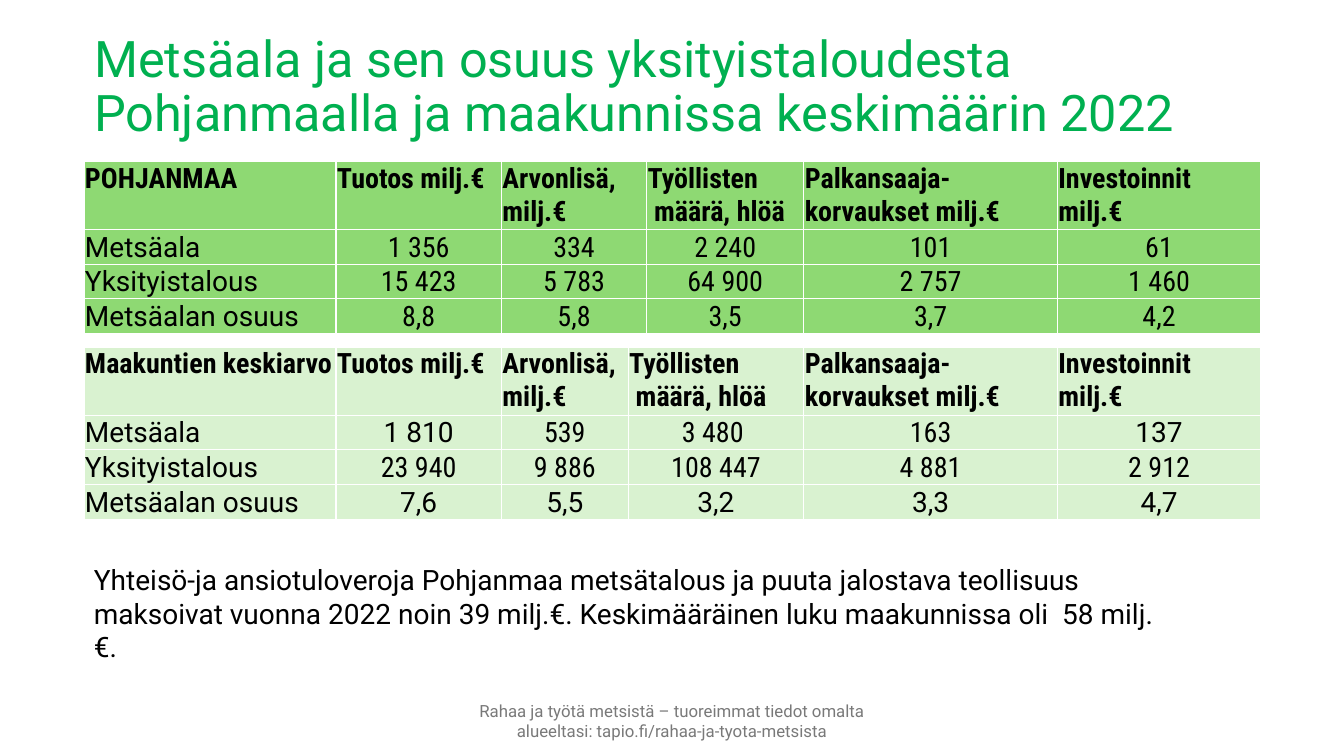
from lxml import etree
from pptx import Presentation, util as u
from pptx.dml.color import RGBColor
from pptx.enum import text
from pptx.oxml import ns

GREEN = RGBColor(0x00, 0xB0, 0x50)
MID_GREEN = RGBColor(0x8E, 0xD9, 0x73)
PALE_GREEN = RGBColor(0xD9, 0xF2, 0xD0)
BLACK = RGBColor(0x00, 0x00, 0x00)
GREY = RGBColor(0x79, 0x79, 0x79)
WHITE = RGBColor(0xFF, 0xFF, 0xFF)

WIDE, NARROW = "Roboto", "Roboto Condensed"
HEADINGS = ["Tuotos milj.€", "Arvonlisä, milj.€", "Työllisten\n määrä, hlöä",
            "Palkansaaja-korvaukset milj.€", "Investoinnit\nmilj.€"]
REGION = [
    ["POHJANMAA", *HEADINGS],
    ["Metsäala", "1 356", "334", "2 240", "101", "61"],
    ["Yksityistalous", "15 423", "5 783", "64 900", "2 757", "1 460"],
    ["Metsäalan osuus", "8,8", "5,8", "3,5", "3,7", "4,2"],
]
AVERAGE = [
    ["Maakuntien keskiarvo", *HEADINGS],
    ["Metsäala", "1 810", "539", "3 480 ", "163", "137"],
    ["Yksityistalous", "23 940", "9 886", "108 447", "4 881", "2 912"],
    ["Metsäalan osuus", "7,6", "5,5", "3,2", "3,3", "4,7"],
]
AVERAGE_WIDE = {(1, 1), (1, 5), *((3, c) for c in range(1, 6))}


class Deck:
    """One slide laid out on a grid of 16 columns and 9 rows."""

    def __init__(self):
        self.prs = Presentation()
        self.prs.slide_width, self.prs.slide_height = u.Inches(13.33), u.Inches(7.5)
        self.s = self.prs.slides.add_slide(self.prs.slide_layouts[5])

    def x(self, cols):
        return int(self.prs.slide_width * cols / 16)

    def y(self, rows):
        return int(self.prs.slide_height * rows / 9)

    def box(self, left, top, width, height):
        return self.x(left), self.y(top), self.x(width), self.y(height)

    def style(self, tf, size, color, name=WIDE, bold=False, align=text.PP_ALIGN.LEFT):
        for p in tf.paragraphs:
            p.alignment = align
            p.font.size, p.font.name, p.font.bold = u.Pt(size), name, bold
            p.font.color.rgb = color

    def title(self, words, *place):
        sp = self.s.shapes.title
        sp.left, sp.top, sp.width, sp.height = self.box(*place)
        tf = sp.text_frame
        tf.text = words
        tf.auto_size = text.MSO_AUTO_SIZE.NONE
        tf.vertical_anchor = text.MSO_ANCHOR.MIDDLE
        tf.paragraphs[0].line_spacing = 0.9
        self.style(tf, 36, GREEN)

    def text(self, words, *place, size=20, color=BLACK,
             align=text.PP_ALIGN.LEFT, anchor=text.MSO_ANCHOR.TOP):
        tf = self.s.shapes.add_textbox(*self.box(*place)).text_frame
        tf.word_wrap, tf.vertical_anchor = True, anchor
        tf.text = words
        self.style(tf, size, color, align=align)

    def borders(self, cell):
        tc_pr = cell._tc.get_or_add_tcPr()
        for side in ("lnL", "lnR", "lnT", "lnB"):
            ln = etree.SubElement(tc_pr, ns.qn(f"a:{side}"), w=str(u.Pt(1)))
            fill = etree.SubElement(ln, ns.qn("a:solidFill"))
            etree.SubElement(fill, ns.qn("a:srgbClr"), val=str(WHITE))

    def table(self, rows, top, cols, fill, wide_cells=()):
        """Draw a table; wide_cells are the values set in the wide font."""
        heights = [0.78] + [0.4] * (len(rows) - 1)
        place = self.box(1, top, sum(cols), sum(heights))
        tbl = self.s.shapes.add_table(len(rows), len(cols), *place).table
        tbl.first_row = tbl.horz_banding = False
        for column, width in zip(tbl.columns, cols):
            column.width = self.x(width)
        for r, row in enumerate(rows):
            tbl.rows[r].height = self.y(heights[r])
            for c, words in enumerate(row):
                cell = tbl.cell(r, c)
                cell.margin_left = cell.margin_right = cell.margin_top = u.Inches(0.01)
                cell.margin_bottom = 0
                cell.vertical_anchor = text.MSO_ANCHOR.BOTTOM if r else text.MSO_ANCHOR.TOP
                self.borders(cell)
                cell.fill.solid()
                cell.fill.fore_color.rgb = fill
                cell.text_frame.text = words
                wide = (r and not c) or (r, c) in wide_cells
                centred = r and c
                self.style(cell.text_frame, 20, BLACK, WIDE if wide else NARROW, bold=r == 0,
                           align=text.PP_ALIGN.CENTER if centred else text.PP_ALIGN.LEFT)


def main():
    deck = Deck()
    deck.text("Rahaa ja työtä metsistä – tuoreimmat tiedot omalta alueeltasi: "
              "tapio.fi/rahaa-ja-tyota-metsista", 5.18, 8.34, 5.64, 0.48, size=12,
              color=GREY, align=text.PP_ALIGN.CENTER, anchor=text.MSO_ANCHOR.MIDDLE)
    deck.title("Metsäala ja sen osuus yksityistaloudesta Pohjanmaalla "
               "ja maakunnissa keskimäärin 2022", 1, 0.18, 14.63, 1.74)
    deck.table(REGION, 1.92, [3, 1.97, 1.73, 1.87, 3.02, 2.42], MID_GREEN)
    deck.table(AVERAGE, 4.13, [3, 1.97, 1.51, 2.09, 3.02, 2.42], PALE_GREEN, AVERAGE_WIDE)
    deck.text("Yhteisö-ja ansiotuloveroja Pohjanmaa metsätalous ja puuta jalostava teollisuus "
              "maksoivat vuonna 2022 noin 39 milj.€. Keskimääräinen luku maakunnissa oli  "
              "58 milj.€.", 1, 6.64, 13.08, 0.92)
    deck.prs.save("out.pptx")


if __name__ == "__main__":
    main()
